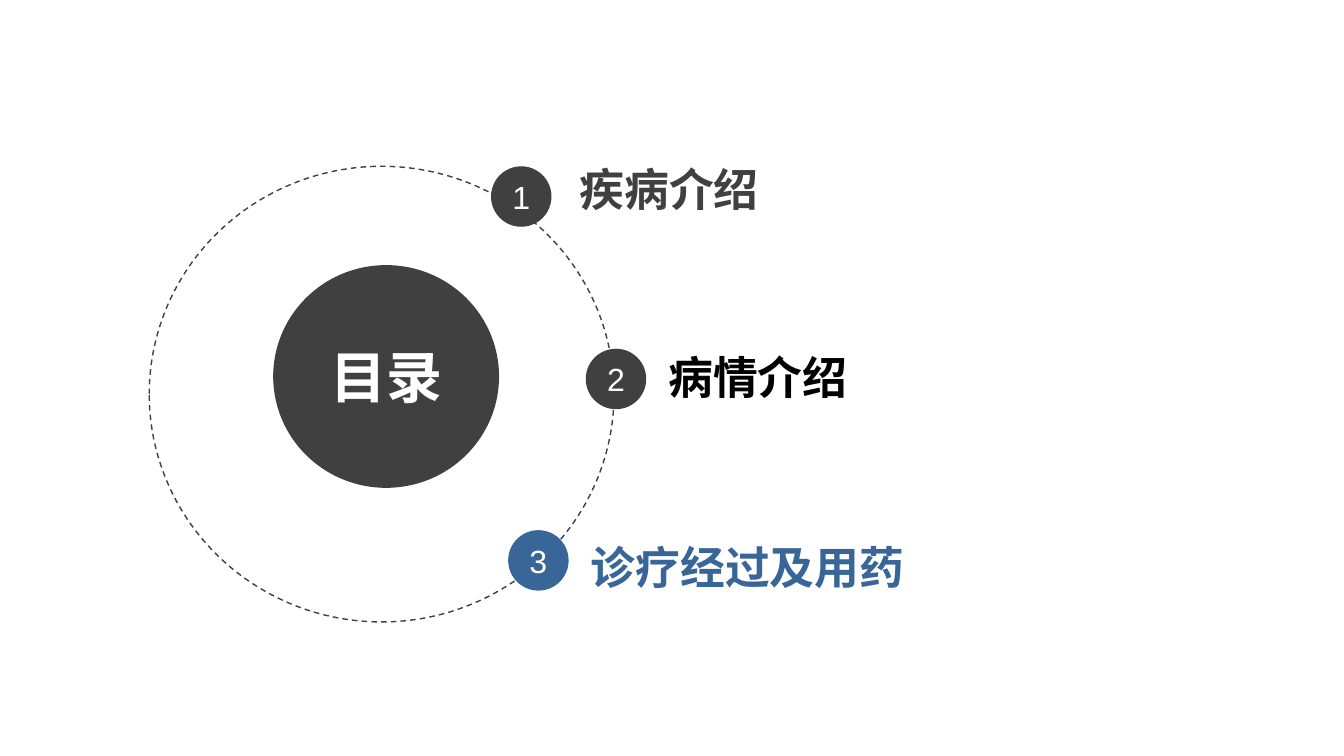
from lxml import etree
from pptx import Presentation
from pptx.dml.color import RGBColor
from pptx.enum.dml import MSO_LINE
from pptx.enum.shapes import MSO_SHAPE
from pptx.enum.text import MSO_ANCHOR, MSO_AUTO_SIZE, PP_ALIGN
from pptx.oxml.ns import qn
from pptx.util import Inches, Pt

OVAL = MSO_SHAPE.OVAL
DASH = MSO_LINE.DASH
MIDDLE = MSO_ANCHOR.MIDDLE
NO_AUTOFIT = MSO_AUTO_SIZE.NONE
FIT_SHAPE = MSO_AUTO_SIZE.SHAPE_TO_FIT_TEXT
CENTER = PP_ALIGN.CENTER

DARK = RGBColor(0x40, 0x40, 0x40)
BLUE = RGBColor(0x39, 0x66, 0x98)
BLACK = RGBColor(0, 0, 0)
WHITE = RGBColor(255, 255, 255)
LATIN_FONT = "Arial"
CJK_FONT = "Noto Sans CJK SC"
BADGE = 0.6


def add_oval(left, top, width, height, fill=None):
    sp = slide.shapes.add_shape(OVAL, Inches(left), Inches(top), Inches(width), Inches(height))
    sp.shadow.inherit = False
    if fill is None:
        sp.fill.background()
    else:
        sp.fill.solid()
        sp.fill.fore_color.rgb = fill
        sp.line.fill.background()
    return sp


def write(sp, text, size, font, color, bold=False, align=None):
    p = sp.text_frame.paragraphs[0]
    p.text = text
    p.alignment = align
    p.font.size = Pt(size)
    p.font.name = font
    p.font.bold = bold
    p.font.color.rgb = color
    r_pr = p.runs[0].font._element
    etree.SubElement(r_pr, qn("a:ea")).set("typeface", CJK_FONT)


prs = Presentation()
prs.slide_width = Inches(13.33)
prs.slide_height = Inches(7.5)
slide = prs.slides.add_slide(prs.slide_layouts[5])

ring = add_oval(1.48, 1.65, 4.61, 4.52)
ring.line.color.rgb = DARK
ring.line.width = Pt(1)
ring.line.dash_style = DASH

items = [
    ("疾病介绍", 4.87, 1.65, 5.65, 1.56, 5.4, DARK, DARK),
    ("病情介绍", 5.81, 3.46, 6.53, 3.42, 5.19, DARK, BLACK),
    ("诊疗经过及用药", 5.04, 5.26, 5.76, 5.31, 6.25, BLUE, BLUE),
]
for number, (text, x, y, text_x, text_y, text_w, fill, color) in enumerate(items, 1):
    badge = add_oval(x, y, BADGE, BADGE, fill)
    tf = badge.text_frame
    tf.margin_left = tf.margin_right = tf.margin_top = tf.margin_bottom = 0
    tf.vertical_anchor = MIDDLE
    write(badge, str(number), 22.9, LATIN_FONT, WHITE, align=CENTER)

    label = slide.shapes.add_textbox(Inches(text_x), Inches(text_y), Inches(text_w), Inches(0.64))
    label.text_frame.word_wrap = True
    label.text_frame.auto_size = FIT_SHAPE
    write(label, text, 32, CJK_FONT, color, bold=True)

hub = add_oval(2.71, 2.63, 2.24, 2.21, DARK)

title = slide.shapes.title
title.left, title.top = Inches(2.43), Inches(2.79)
title.width, title.height = Inches(2.8), Inches(1.89)
tf = title.text_frame
tf.margin_left = tf.margin_right = tf.margin_top = tf.margin_bottom = 0
tf.vertical_anchor = MIDDLE
tf.auto_size = NO_AUTOFIT
write(title, "目录", 40, LATIN_FONT, WHITE, bold=True, align=CENTER)
hub.element.addnext(title.element)

prs.save("out.pptx")
